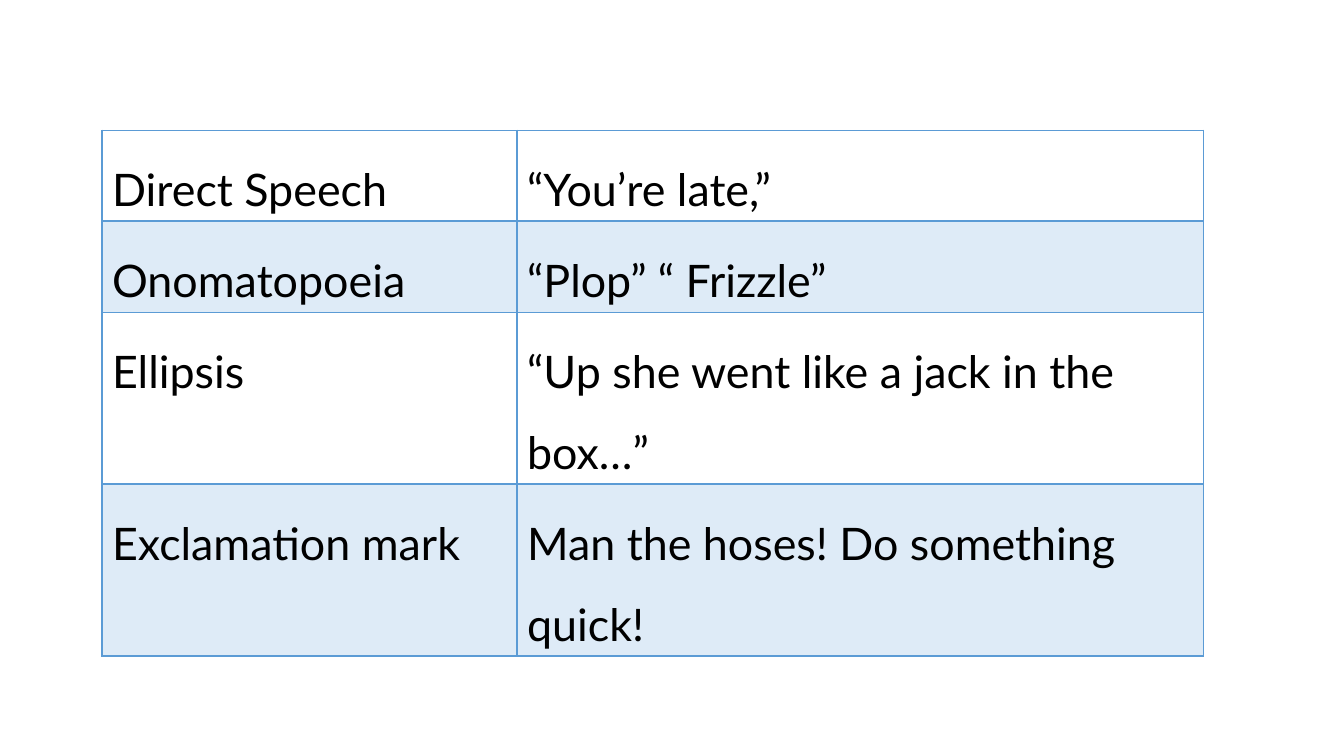
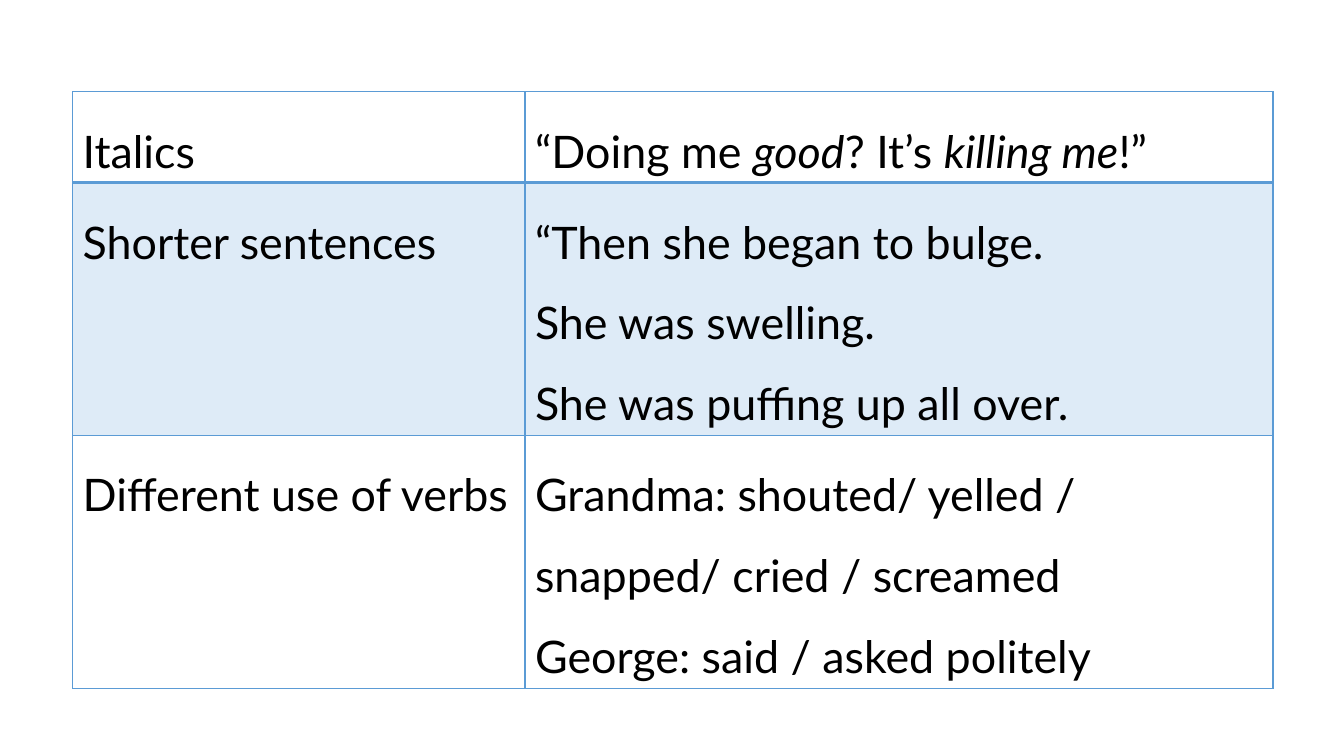
import pptx
import pptx.util
import pptx.dml.color
import pptx.oxml

Cm = pptx.util.Cm
Pt = pptx.util.Pt

BLUE = "5B9BD5"
PALE = "DEEBF7"
WHITE = "FFFFFF"
BLACK = "000000"
FONT = "Lato"
SIZE = 32
LINE = 2.04  # height of one line of text, in cm
PAD = 0.25   # top and bottom cell margins together, in cm


def color(code):
    return pptx.dml.color.RGBColor.from_string(code)


def edge(cell, side, width):
    """Draw one border of a cell; side is L, R, T or B."""
    line = pptx.oxml.parse_xml(
        '<a:ln%s xmlns:a="http://schemas.openxmlformats.org/drawingml/2006/main" w="%d">'
        '<a:solidFill><a:srgbClr val="%s"/></a:solidFill></a:ln%s>'
        % (side, Pt(width), BLUE, side))
    cell._tc.get_or_add_tcPr().append(line)


# Each row: term, example (asterisks enclose italics), lines of text it takes
pages = [
    {"left": 2.57, "top": 3.28, "cols": (10.46, 17.3), "rows": [
        ("Direct Speech", "“You’re late,”", 1),
        ("Onomatopoeia", "“Plop” “ Frizzle”", 1),
        ("Ellipsis", "“Up she went like a jack in the box…”", 2),
        ("Exclamation mark", "Man the hoses! Do something quick!", 2),
    ]},
    {"left": 1.83, "top": 2.31, "cols": (11.4, 18.85), "rows": [
        ("Italics", "“Doing me *good*? It’s *killing me*!”", 1),
        ("Shorter sentences",
         "“Then she began to bulge.\nShe was swelling.\nShe was puffing up all over.", 3),
        ("Different use of verbs",
         "Grandma: shouted/ yelled / snapped/ cried / screamed\n"
         "George: said / asked politely", 3),
    ]},
]

deck = pptx.Presentation()
deck.slide_width = Cm(33.87)
deck.slide_height = Cm(19.05)
blank = deck.slide_layouts[6]

for page in pages:
    slide = deck.slides.add_slide(blank)
    rows = page["rows"]
    highs = [PAD + LINE * row[2] for row in rows]
    table = slide.shapes.add_table(
        len(rows), 2, Cm(page["left"]), Cm(page["top"]),
        Cm(sum(page["cols"])), Cm(sum(highs))).table
    table.first_row = False
    table.horz_banding = False
    for col, width in zip(table.columns, page["cols"]):
        col.width = Cm(width)

    for i, row in enumerate(rows):
        table.rows[i].height = Cm(highs[i])
        for j, text in enumerate(row[:2]):
            cell = table.cell(i, j)
            # The rule below the first row is heavier
            widths = {"L": 1, "R": 1, "T": 2 if i == 1 else 1, "B": 2 if i == 0 else 1}
            for side, width in widths.items():
                edge(cell, side, width)
            cell.fill.solid()
            cell.fill.fore_color.rgb = color(PALE if i % 2 else WHITE)

            cell.text_frame.text = text
            for para in cell.text_frame.paragraphs:
                para.line_spacing = 1.5
                parts = para.text.split("*")
                para.text = parts[0]
                for part in parts[1:]:
                    para.add_run().text = part
                for k, run in enumerate(para.runs):
                    run.font.name = FONT
                    run.font.size = Pt(SIZE)
                    run.font.color.rgb = color(BLACK)
                    run.font.italic = k % 2 == 1

deck.save("out.pptx")
